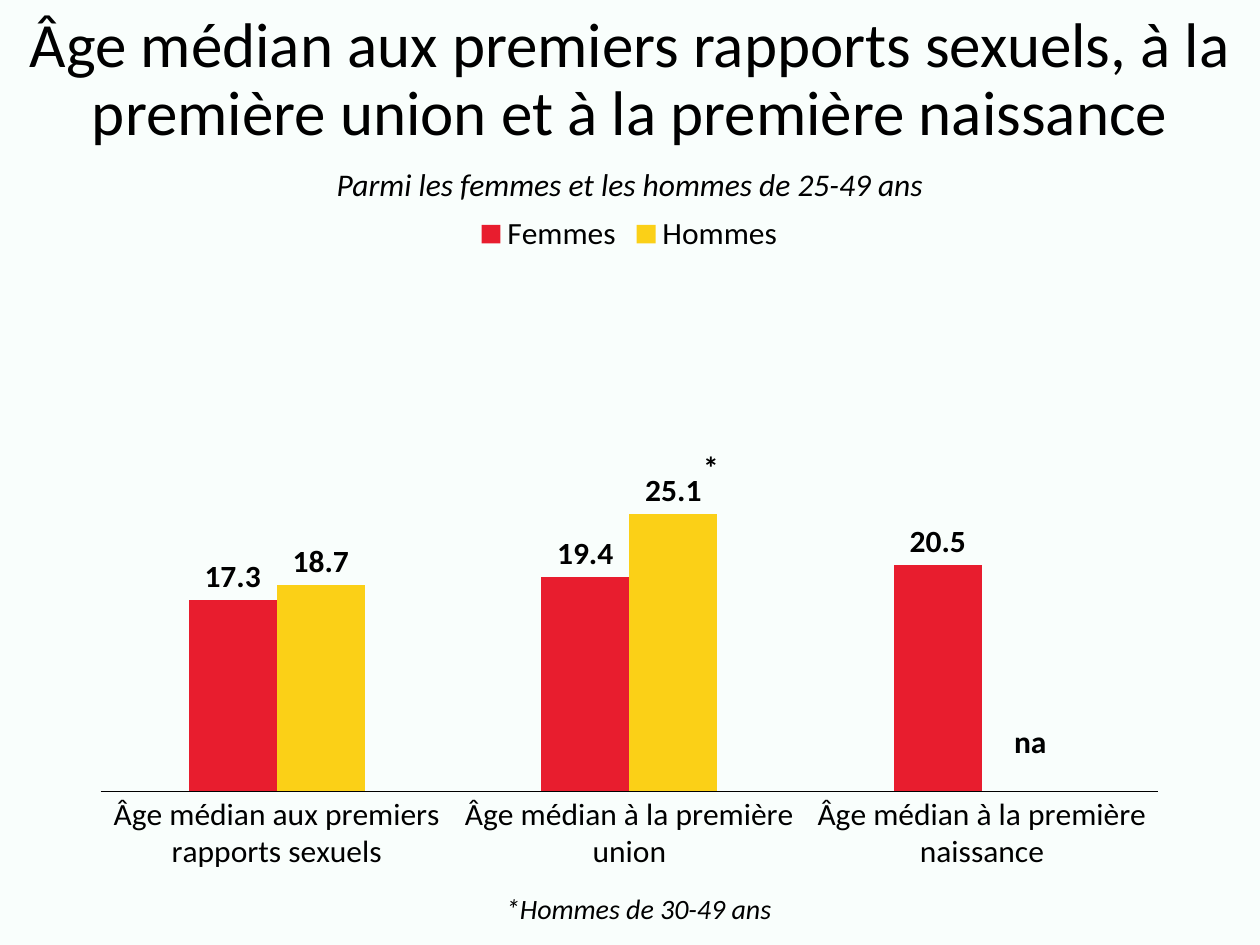
from lxml import etree
from pptx import Presentation
from pptx.chart.data import CategoryChartData
from pptx.dml.color import RGBColor
from pptx.enum.chart import XL_CHART_TYPE, XL_LABEL_POSITION, XL_LEGEND_POSITION, XL_TICK_MARK
from pptx.enum.text import MSO_ANCHOR, PP_ALIGN
from pptx.oxml.ns import qn
from pptx.util import Inches, Pt

COLUMNS = XL_CHART_TYPE.COLUMN_CLUSTERED
ABOVE_BAR = XL_LABEL_POSITION.OUTSIDE_END
LEGEND_TOP = XL_LEGEND_POSITION.TOP
NO_TICK = XL_TICK_MARK.NONE
CENTER, LEFT = PP_ALIGN.CENTER, PP_ALIGN.LEFT
MIDDLE, TOP = MSO_ANCHOR.MIDDLE, MSO_ANCHOR.TOP

BLACK = RGBColor(0x00, 0x00, 0x00)
RED = RGBColor(0xE8, 0x1D, 0x2E)
YELLOW = RGBColor(0xFB, 0xD0, 0x17)
PALE_MINT = RGBColor(0xF9, 0xFE, 0xFC)
FONT = "Calibri"

WIDTH, HEIGHT = 10, 7.5
CATEGORIES = [
    "Âge médian aux premiers rapports sexuels",
    "Âge médian à la première union",
    "Âge médian à la première naissance",
]
SERIES = [
    ("Femmes", (17.3, 19.4, 20.5), RED),
    ("Hommes", (18.7, 25.1, None), YELLOW),
]
PLOT_SHARES = {"x": 0.017, "y": 0.06, "w": 0.966, "h": 0.843}


def style_font(font, size, bold=False, italic=False):
    font.name, font.size = FONT, Pt(size)
    font.bold, font.italic = bold, italic
    font.color.rgb = BLACK


def add_text(slide, box, text, size, align=LEFT, anchor=TOP, spacing=1.0, **style):
    frame = slide.shapes.add_textbox(*map(Inches, box)).text_frame
    frame.word_wrap = True
    frame.vertical_anchor = anchor
    frame.text = text
    paragraph = frame.paragraphs[0]
    paragraph.alignment, paragraph.line_spacing = align, spacing
    style_font(paragraph.runs[0].font, size, **style)


def add_heading(slide, box):
    left, top, width, height = box
    add_text(slide, (left, top, width, 1.18),
             "Âge médian aux premiers rapports sexuels, à la première union "
             "et à la première naissance", 36, CENTER, MIDDLE, 0.9)
    add_text(slide, (left, top + height - 0.4, width, 0.4),
             "Parmi les femmes et les hommes de 25-49 ans", 18, CENTER, italic=True)


def set_plot_layout(chart):
    """Fix the inner plot area as shares of the chart."""
    plot_area = chart.element.find(".//" + qn("c:plotArea"))
    for automatic in plot_area.findall(qn("c:layout")):
        plot_area.remove(automatic)
    layout = etree.Element(qn("c:layout"))
    manual = etree.SubElement(layout, qn("c:manualLayout"))
    settings = {"layoutTarget": "inner", "xMode": "edge", "yMode": "edge", **PLOT_SHARES}
    for tag, value in settings.items():
        etree.SubElement(manual, qn("c:" + tag)).set("val", str(value))
    plot_area.insert(0, layout)


def add_age_chart(slide, box):
    data = CategoryChartData(number_format="0.0")
    data.categories = CATEGORIES
    for name, ages, _ in SERIES:
        data.add_series(name, ages)
    chart = slide.shapes.add_chart(COLUMNS, *map(Inches, box), data).chart
    chart.has_title = False
    style_font(chart.font, 10)
    set_plot_layout(chart)

    chart.has_legend = True
    chart.legend.position = LEGEND_TOP
    chart.legend.include_in_layout = False
    style_font(chart.legend.font, 18)

    age_axis, event_axis = chart.value_axis, chart.category_axis
    age_axis.minimum_scale, age_axis.maximum_scale = 0, 50
    age_axis.has_major_gridlines = False
    age_axis.visible = False
    event_axis.major_tick_mark = NO_TICK
    event_axis.format.line.color.rgb = BLACK
    event_axis.format.line.width = Pt(0.75)
    style_font(event_axis.tick_labels.font, 18)

    plot = chart.plots[0]
    plot.gap_width, plot.overlap, plot.vary_by_categories = 200, 0, False
    for series, (_, _, color) in zip(plot.series, SERIES):
        series.format.fill.solid()
        series.format.fill.fore_color.rgb = color
        labels = series.data_labels
        labels.show_value = True
        labels.position = ABOVE_BAR
        labels.number_format, labels.number_format_is_linked = "0.0", False
        style_font(labels.font, 18, bold=True)


def add_chart_notes(slide, box):
    """Mark the exceptional bars and explain the asterisk under the chart."""
    left, top, width, height = box
    for text, x, y in (("*", 0.556, 0.361), ("na", 0.84, 0.769)):
        add_text(slide, (left + x * width, top + y * height, 0.48, 0.4),
                 text, 18, bold=True)
    add_text(slide, (left + 0.376 * width, top + height + 0.12, 2.82, 0.37),
             "*Hommes de 30-49 ans", 16, italic=True)


def main():
    presentation = Presentation()
    presentation.slide_width, presentation.slide_height = Inches(WIDTH), Inches(HEIGHT)
    slide = presentation.slides.add_slide(presentation.slide_layouts[6])
    slide.background.fill.solid()
    slide.background.fill.fore_color.rgb = PALE_MINT
    chart_box = (0.65, 1.59, 8.69, 5.32)
    add_age_chart(slide, chart_box)
    add_heading(slide, (0, 0.05, WIDTH, 1.61))
    add_chart_notes(slide, chart_box)
    presentation.save("out.pptx")


if __name__ == "__main__":
    main()
